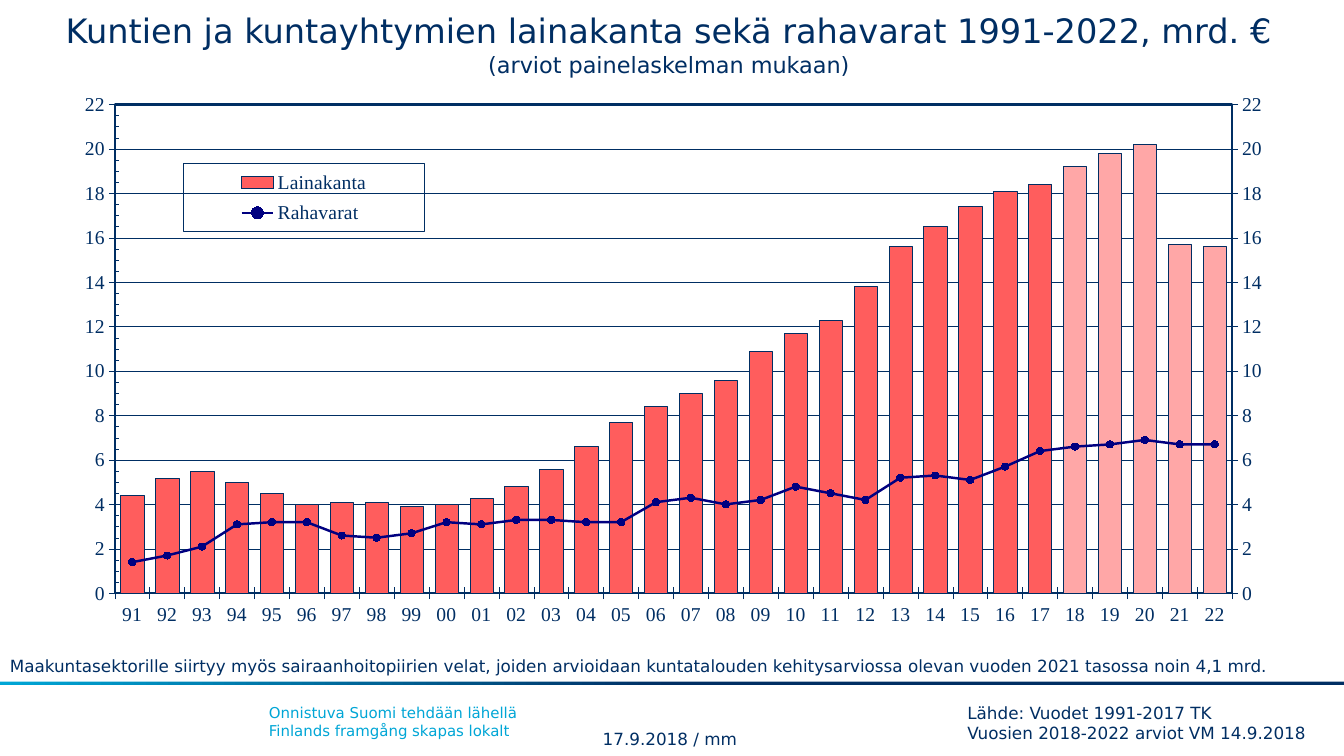
import copy

import lxml.etree
import pptx
import pptx.chart.data
import pptx.dml.color
import pptx.enum.chart
import pptx.enum.dml
import pptx.enum.shapes
import pptx.enum.text
import pptx.oxml
import pptx.util
from pptx.util import Cm, Pt

COLORS = {
    "navy": "002E63",
    "cyan": "00A6D6",
    "white": "FFFFFF",
    "loans": "FF5D5D",
    "loans_forecast": "FFA7A7",
    "cash": "000080",
}
SANS = "DejaVu Sans"
SERIF = "Times New Roman"
NAMESPACES = (
    'xmlns:c="http://schemas.openxmlformats.org/drawingml/2006/chart" '
    'xmlns:a="http://schemas.openxmlformats.org/drawingml/2006/main"'
)

YEARS = [f"{year % 100:02d}" for year in range(1991, 2023)]
FIRST_FORECAST = YEARS.index("18")
LOANS = [4.4, 5.2, 5.5, 5, 4.5, 4, 4.1, 4.1, 3.9, 4, 4.3, 4.8, 5.6, 6.6, 7.7, 8.4,
         9, 9.6, 10.9, 11.7, 12.3, 13.8, 15.6, 16.5, 17.4, 18.1, 18.4, 19.2, 19.8,
         20.2, 15.7, 15.6]
CASH = [1.4, 1.7, 2.1, 3.1, 3.2, 3.2, 2.6, 2.5, 2.7, 3.2, 3.1, 3.3, 3.3, 3.2, 3.2,
        4.1, 4.3, 4, 4.2, 4.8, 4.5, 4.2, 5.2, 5.3, 5.1, 5.7, 6.4, 6.6, 6.7, 6.9,
        6.7, 6.7]


def rgb(name):
    return pptx.dml.color.RGBColor.from_string(COLORS[name])


def set_font(font, size, color="navy", face=SANS):
    font.size = Pt(size)
    font.name = face
    font.color.rgb = rgb(color)


def set_line(line, color, width):
    line.color.rgb = rgb(color)
    line.width = Pt(width)


def set_fill(fill, color):
    fill.solid()
    fill.fore_color.rgb = rgb(color)


def write_lines(frame, lines, size, color="navy"):
    frame.word_wrap = True
    frame.text = "\n".join(lines)
    for paragraph in frame.paragraphs:
        paragraph.alignment = pptx.enum.text.PP_ALIGN.LEFT
        set_font(paragraph.font, size, color)


def add_title(slide, box):
    frame = slide.shapes.add_textbox(*box).text_frame
    frame.word_wrap = True
    frame.vertical_anchor = pptx.enum.text.MSO_ANCHOR.BOTTOM
    frame.margin_left = frame.margin_right = 0
    heading = frame.paragraphs[0]
    heading.alignment = pptx.enum.text.PP_ALIGN.CENTER
    topic = heading.add_run()
    topic.text = "Kuntien ja kuntayhtymien lainakanta sekä rahavarat 1991-2022, mrd. €"
    heading.add_line_break()
    remark = heading.add_run()
    remark.text = "(arviot painelaskelman mukaan)"
    set_font(topic.font, 24)
    set_font(remark.font, 16)


def chart_xml(markup):
    """Parse one chart element written without its namespaces."""
    tag, rest = markup.split(">", 1)
    return pptx.oxml.parse_xml(f"{tag} {NAMESPACES}>{rest}")


def layout_xml(x, y, w, h, target=""):
    sizes = "".join(f'<c:{key} val="{value}"/>' for key, value in zip("xywh", (x, y, w, h)))
    return chart_xml(
        f'<c:layout><c:manualLayout>{target}<c:xMode val="edge"/><c:yMode val="edge"/>'
        f"{sizes}</c:manualLayout></c:layout>")


def outline_xml(width):
    return chart_xml(
        f'<c:spPr><a:noFill/><a:ln w="{Pt(width)}"><a:solidFill>'
        f'<a:srgbClr val="{COLORS["navy"]}"/></a:solidFill></a:ln></c:spPr>')


def drop(parent, tag):
    for child in parent.xpath(f"c:{tag}"):
        parent.remove(child)


def move_cash_to_right_axis(plot_area):
    """Turn the second series into a line on its own pair of axes."""
    bars = plot_area.xpath("c:barChart")[0]
    cash = bars.xpath("c:ser")[1]
    drop(cash, "invertIfNegative")
    lines = chart_xml(
        '<c:lineChart><c:grouping val="standard"/><c:varyColors val="0"/>'
        '<c:marker val="1"/><c:axId val="501"/><c:axId val="502"/></c:lineChart>')
    lines.insert(2, cash)
    bars.addnext(lines)

    value_axis = plot_area.xpath("c:valAx")[0]
    hidden_years = copy.deepcopy(plot_area.xpath("c:catAx")[0])
    right_axis = copy.deepcopy(value_axis)
    drop(right_axis, "majorGridlines")
    changes = (
        (hidden_years, {"axId": "501", "crossAx": "502", "delete": "1"}),
        (right_axis, {"axId": "502", "crossAx": "501", "axPos": "r",
                      "crosses": "max", "minorTickMark": "none"}),
    )
    for axis, values in changes:
        for tag, value in values.items():
            for child in axis.xpath(f"c:{tag}"):
                child.set("val", value)
    value_axis.addnext(right_axis)
    value_axis.addnext(hidden_years)


def style_axes(chart):
    tick = pptx.enum.chart.XL_TICK_MARK
    for axis in (chart.category_axis, chart.value_axis):
        axis.major_tick_mark = tick.CROSS
        set_line(axis.format.line, "navy", 0.3)
    values = chart.value_axis
    values.minor_tick_mark = tick.INSIDE
    values.minimum_scale, values.maximum_scale = 0, 22
    values.major_unit, values.minor_unit = 2, 0.5
    values.tick_labels.number_format = "0"
    values.tick_labels.number_format_is_linked = False
    values.has_major_gridlines = True
    grid = values.major_gridlines.format.line
    set_line(grid, "navy", 0.25)
    grid.dash_style = pptx.enum.dml.MSO_LINE.ROUND_DOT


def add_legend(chart):
    chart.has_legend = True
    chart.legend.position = pptx.enum.chart.XL_LEGEND_POSITION.RIGHT
    chart.legend.include_in_layout = False
    legend = chart.legend._element
    drop(legend, "layout")
    legend.xpath("c:legendPos")[0].addnext(layout_xml(0.115, 0.143, 0.19, 0.122))
    legend.xpath("c:overlay")[0].addnext(outline_xml(0.75))


def add_loan_chart(slide, box):
    data = pptx.chart.data.CategoryChartData()
    data.categories = YEARS
    data.add_series("Lainakanta", LOANS)
    data.add_series("Rahavarat", CASH)
    kind = pptx.enum.chart.XL_CHART_TYPE.COLUMN_CLUSTERED
    chart = slide.shapes.add_chart(kind, *box, data).chart
    chart.has_title = False
    set_font(chart.font, 14, face=SERIF)
    style_axes(chart)
    add_legend(chart)

    plot_area = chart._chartSpace.xpath("c:chart/c:plotArea")[0]
    move_cash_to_right_axis(plot_area)
    drop(plot_area, "layout")
    inner = '<c:layoutTarget val="inner"/>'
    plot_area.insert(0, layout_xml(0.061, 0.036, 0.88, 0.88, inner))
    plot_area.append(outline_xml(1.5))

    columns, lines = chart.plots
    columns.gap_width = 50
    columns.vary_by_categories = False
    loans = columns.series[0]
    set_fill(loans.format.fill, "loans")
    set_line(loans.format.line, "navy", 0.25)
    for index in range(FIRST_FORECAST, len(YEARS)):
        forecast = loans.points[index].format
        set_fill(forecast.fill, "loans_forecast")
        set_line(forecast.line, "navy", 0.25)

    cash = lines.series[0]
    cash.smooth = False
    set_line(cash.format.line, "cash", 1.75)
    cash.marker.style = pptx.enum.chart.XL_MARKER_STYLE.CIRCLE
    cash.marker.size = 5
    set_fill(cash.marker.format.fill, "cash")
    set_line(cash.marker.format.line, "cash", 0.75)


def add_band(slide, box):
    band = slide.shapes.add_shape(pptx.enum.shapes.MSO_SHAPE.RECTANGLE, *box)
    band.shadow.inherit = False
    band.line.fill.background()
    return band


def add_footer(slide, left, top, width):
    """Place the note, the rule and the three credits below the chart."""
    rule = add_band(slide, (left, top + Cm(0.68), width, Cm(0.18)))
    rule.fill.gradient()
    rule.fill.gradient_angle = 180
    for stop, position, color in zip(rule.fill.gradient_stops, (0.5, 1), ("navy", "cyan")):
        stop.position = position
        stop.color.rgb = rgb(color)

    note = add_band(slide, (left, top, width, Cm(0.77)))
    set_fill(note.fill, "white")
    note.text_frame.vertical_anchor = pptx.enum.text.MSO_ANCHOR.TOP
    write_lines(note.text_frame, [
        "Maakuntasektorille siirtyy myös sairaanhoitopiirien velat, joiden arvioidaan "
        "kuntatalouden kehitysarviossa olevan vuoden 2021 tasossa noin 4,1 mrd."], 12)

    slogan = slide.shapes.add_textbox(left + Cm(6.53), top + Cm(1.19), Cm(22.12), Cm(1.17))
    write_lines(slogan.text_frame, ["Onnistuva Suomi tehdään lähellä",
                                    "Finlands framgång skapas lokalt"], 10.7, "cyan")
    date = slide.shapes.add_textbox(left + Cm(15.19), top + Cm(1.8), Cm(4.14), Cm(0.84)).text_frame
    date.margin_left = date.margin_top = date.margin_right = date.margin_bottom = 0
    date.vertical_anchor = pptx.enum.text.MSO_ANCHOR.MIDDLE
    write_lines(date, ["17.9.2018 / mm"], 12)
    source = slide.shapes.add_textbox(left + Cm(24.13), top + Cm(1.17), Cm(9.5), Cm(1.27))
    write_lines(source.text_frame, ["Lähde: Vuodet 1991-2017 TK",
                                    "Vuosien 2018-2022 arviot VM 14.9.2018"], 12)


def main():
    deck = pptx.Presentation()
    deck.slide_width, deck.slide_height = Cm(33.87), Cm(19.05)
    slide = deck.slides.add_slide(deck.slide_layouts[6])
    add_title(slide, (Cm(-0.41), Cm(-0.1), Cm(34.54), Cm(2.18)))
    add_loan_chart(slide, (Cm(0.94), Cm(2.13), Cm(32), Cm(14)))
    add_footer(slide, Cm(0), Cm(16.41), deck.slide_width)
    deck.save("out.pptx")


if __name__ == "__main__":
    main()
